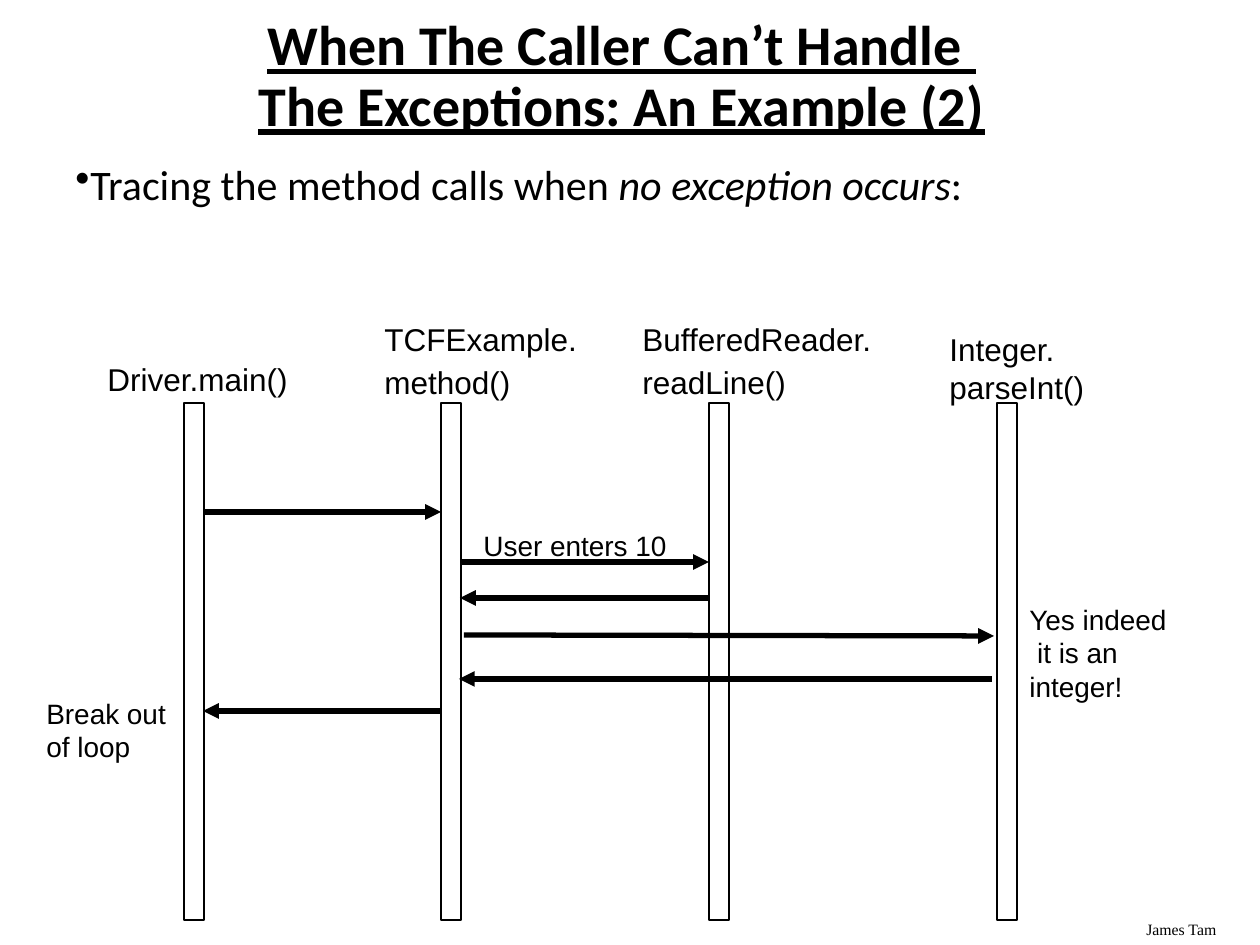
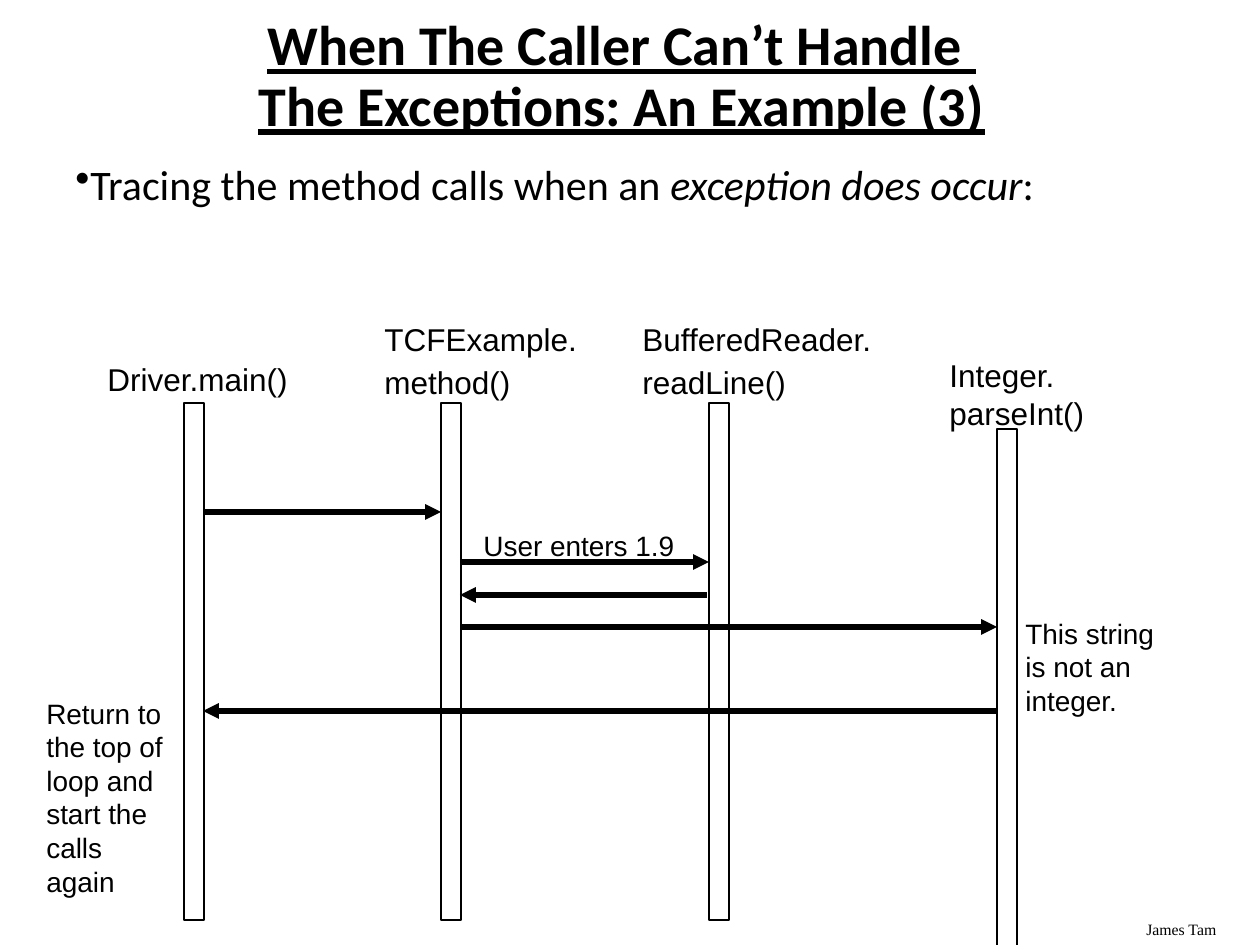
from pptx import Presentation
from pptx import util as u
from pptx.dml.color import RGBColor
from pptx.enum import shapes, text
from pptx.oxml import ns
from lxml import etree

BLACK = RGBColor(0, 0, 0)
WHITE = RGBColor(255, 255, 255)
SCALE = u.Inches(1) / 126

# Text styles
TITLE = dict(name="Calibri", size=u.Pt(32), bold=True, underline=True)
BODY = dict(name="Calibri", size=u.Pt(24))
HEAD = dict(name="Arial", size=u.Pt(18))
NOTE = dict(name="Arial", size=u.Pt(16))
FOOT = dict(name="Times New Roman", size=u.Pt(9))

# Lifelines of the sequence diagram
BARS = (184, 441, 709, 997)
BAR_TOP, BAR_W, BAR_H = 403, 20, 517
BREAK = "\n"


def px(*vals):
    return [u.Emu(round(v * SCALE)) for v in vals]


def tag(parent, name, **attrs):
    return etree.SubElement(parent, ns.qn(name), attrs)


class Deck:
    def __init__(self):
        self.prs = Presentation()
        self.prs.slide_width, self.prs.slide_height = px(1260, 945)
        self.slide = None

    def page(self):
        self.slide = self.prs.slides.add_slide(self.prs.slide_layouts[6])
        fill = self.slide.background.fill
        fill.solid()
        fill.fore_color.rgb = WHITE

    def label(self, box, lines, style, **para):
        """Each line is a paragraph of pieces; odd pieces are italic or a break."""
        shape = self.slide.shapes.add_textbox(*px(*box))
        frame = shape.text_frame
        frame.word_wrap = True
        for i, line in enumerate(lines):
            par = frame.paragraphs[0] if i == 0 else frame.add_paragraph()
            for key, val in para.items():
                setattr(par, key, val)
            for n, piece in enumerate(line):
                if piece == BREAK:
                    par.add_line_break()
                    continue
                run = par.add_run()
                run.text = piece
                for key, val in style.items():
                    setattr(run.font, key, val)
                run.font.italic = n % 2 == 1
                run.font.color.rgb = BLACK
        return frame

    def title(self, num):
        line = ("When The Caller Can’t Handle ", BREAK,
                f"The Exceptions: An Example ({num})")
        frame = self.label((59, 42, 1125, 72), [line], TITLE,
                           alignment=text.PP_ALIGN.CENTER, line_spacing=0.9)
        frame.vertical_anchor = text.MSO_ANCHOR.MIDDLE

    def bullet(self, line):
        frame = self.label((63, 152, 1126, 740), [line], BODY)
        props = frame.paragraphs[0]._p.get_or_add_pPr()
        props.set("marL", "0")
        props.set("indent", "0")
        tag(props, "a:buChar", char="•")

    def bar(self, left, top):
        rect = self.slide.shapes.add_shape(
            shapes.MSO_SHAPE.RECTANGLE, *px(left, top, BAR_W, BAR_H))
        rect.shadow.inherit = False
        rect.fill.background()
        rect.line.color.rgb = BLACK
        rect.line.width = u.Pt(1)

    def arrow(self, *ends):
        line = self.slide.shapes.add_connector(
            shapes.MSO_CONNECTOR.STRAIGHT, *px(*ends))
        line.line.color.rgb = BLACK
        line.line.width = u.Pt(3)
        tag(line.line._get_or_add_ln(), "a:tailEnd", type="triangle")
        tag(line._element.spPr, "a:effectLst")

    def trace(self, num, point, entry, check, end, arrows, drop=0):
        """One slide: heading, lifelines, calls and remarks."""
        self.page()
        self.label((1134, 914, 126, 31), [("James Tam",)], FOOT)
        self.title(num)
        self.bullet(point)

        # Lifelines with their method names
        self.label((95, 354, 228, 50), [("Driver.main()",)], HEAD)
        for left, width, owner, call in (
                (372, 248, "TCFExample.", "method()"),
                (630, 268, "BufferedReader.", "readLine()")):
            self.label((left, 314, width, 95), [(owner,), (call,)], HEAD,
                       space_before=u.Pt(3))
        self.label((937, 324 + drop, 188, 88), [("Integer. parseInt()",)], HEAD)
        for left in BARS:
            self.bar(left, BAR_TOP + (drop if left == BARS[-1] else 0))

        # Calls: the first two are the same on every slide
        for ends in ((203, 512, 441, 512), (461, 562, 709, 562), *arrows):
            self.arrow(*ends)

        # Remarks
        self.label((471, 522, 222, 47), [(f"User enters {entry}",)], NOTE)
        left, top, line = check
        self.label((left, top, 169, 113), [line], NOTE)
        self.label((34, 690, 149, 80), [(end,)], NOTE)


def main():
    deck = Deck()

    # No exception
    deck.trace(
        2, ("Tracing the method calls when ", "no exception occurs", ":"), "10",
        (1017, 596, ("Yes indeed", BREAK, " it is an integer!")),
        "Break out of loop",
        ((708, 598, 460, 598), (464, 635, 994, 636),
         (992, 679, 459, 679), (441, 711, 203, 711)))

    # Exception
    deck.trace(
        3, ("Tracing the method calls when an ", "exception does occur", ":"), "1.9",
        (1013, 610, ("This string is not an integer.",)),
        "Return to the top of loop and start the calls again",
        ((707, 595, 460, 595), (461, 627, 997, 627), (997, 711, 203, 711)),
        drop=26)

    deck.prs.save("out.pptx")


if __name__ == "__main__":
    main()
